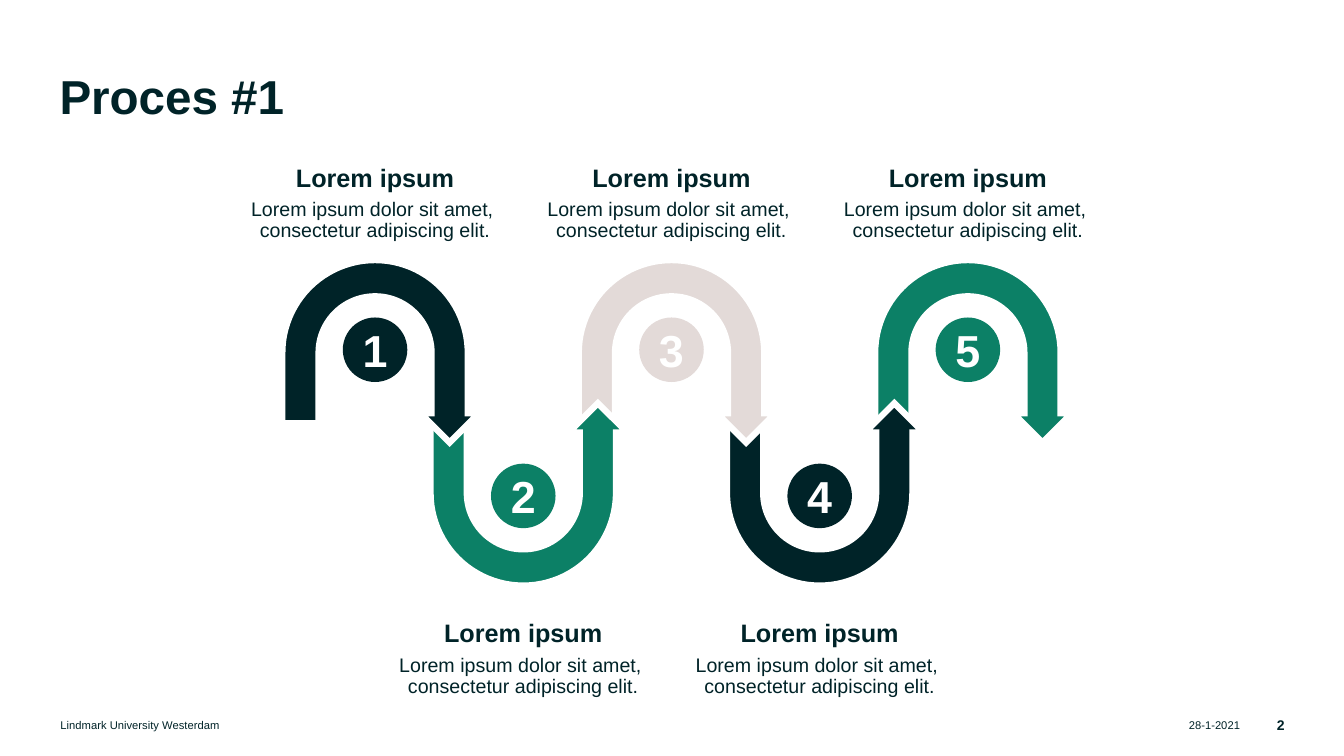
from dataclasses import dataclass
from math import cos, pi, sin

from lxml.etree import SubElement
from pptx import Presentation
from pptx.dml.color import RGBColor
from pptx.enum.shapes import MSO_SHAPE as Preset
from pptx.enum.text import MSO_ANCHOR as Anchor, MSO_AUTO_SIZE as AutoSize, PP_ALIGN as Align
from pptx.oxml.ns import qn
from pptx.shapes.autoshape import Shape
from pptx.slide import Slide
from pptx.text.text import TextFrame
from pptx.util import Inches, Pt

COLORS = {"dark": "002328", "green": "0C8066", "sand": "E3DAD8", "white": "FFFFFF"}
FIRST_CENTER, STEP_PITCH = 3.72, 1.47
OUTER_RADIUS, INNER_RADIUS = 0.92, 0.56
LEG_CENTER, HEAD_HALF = 0.74, 0.29
TAIL_END, HEAD_BASE, HEAD_TIP = 0.7, 0.6, 0.89
BADGE_SIZE = 0.64
CAPTION_WIDTH, CAPTION_HEIGHT = 2.56, 0.78
ARC_SEGMENTS = 48


@dataclass(frozen=True)
class Row:
    arc_y: float
    leg_direction: int
    badge_top: float
    caption_top: float


@dataclass(frozen=True)
class Step:
    number: int
    color: str
    row: Row
    heading: str = "Lorem ipsum"
    detail: str = "Lorem ipsum dolor sit amet, \vconsectetur adipiscing elit."

    @property
    def center(self) -> float:
        return FIRST_CENTER + (self.number - 1) * STEP_PITCH


@dataclass(frozen=True)
class FooterItem:
    text: str
    left: float
    width: float
    size: int
    align: Align
    bold: bool = False


UPPER = Row(arc_y=3.5, leg_direction=1, badge_top=3.15, caption_top=1.62)
LOWER = Row(arc_y=4.89, leg_direction=-1, badge_top=4.6, caption_top=6.14)
STEPS = [
    Step(1, "dark", UPPER),
    Step(2, "green", LOWER),
    Step(3, "sand", UPPER),
    Step(4, "dark", LOWER),
    Step(5, "green", UPPER),
]
FOOTER = [
    FooterItem("28-1-2021", 11.54, 0.76, 8, Align.RIGHT),
    FooterItem("Lindmark University Westerdam", 0.6, 10.79, 8, Align.LEFT),
    FooterItem("2", 12.45, 0.29, 10, Align.RIGHT, True),
]


def rgb(name: str) -> RGBColor:
    return RGBColor.from_string(COLORS[name])


def set_frame(frame: TextFrame, anchor: Anchor) -> None:
    settings = {
        "margin_left": 0, "margin_right": 0, "margin_top": 0, "margin_bottom": 0,
        "word_wrap": True, "auto_size": AutoSize.NONE, "vertical_anchor": anchor,
    }
    for attribute, value in settings.items():
        setattr(frame, attribute, value)


def write(frame: TextFrame, text: str, size: int, color: str = "dark", bold: bool = False,
          index: int = 0, **layout: object) -> None:
    """Write one paragraph; layout holds paragraph attributes such as alignment."""
    paragraph = frame.paragraphs[0] if index == 0 else frame.add_paragraph()
    paragraph.text = text
    for attribute, value in layout.items():
        setattr(paragraph, attribute, value)
    for run in paragraph.runs:
        for attribute, value in {"name": "Arial", "size": Pt(size), "bold": bold}.items():
            setattr(run.font, attribute, value)
        run.font.color.rgb = rgb(color)


def add_text_frame(slide: Slide, left: float, top: float, width: float, height: float,
                   anchor: Anchor) -> TextFrame:
    box = slide.shapes.add_textbox(Inches(left), Inches(top), Inches(width), Inches(height))
    set_frame(box.text_frame, anchor)
    return box.text_frame


def paint(shape: Shape, color: str) -> None:
    shape.shadow.inherit = False
    shape.fill.solid()
    shape.fill.fore_color.rgb = rgb(color)


def arc(radius: float, start: float, end: float) -> list[tuple[float, float]]:
    """Points on the bend, relative to its centre, with the legs running towards +y."""
    angles = [start + (end - start) * i / ARC_SEGMENTS for i in range(ARC_SEGMENTS + 1)]
    return [(radius * cos(angle), -radius * sin(angle)) for angle in angles]


def add_bent_arrow(slide: Slide, step: Step) -> None:
    outline = [
        (-OUTER_RADIUS, TAIL_END),
        *arc(OUTER_RADIUS, pi, 0),
        (OUTER_RADIUS, HEAD_BASE),
        (LEG_CENTER + HEAD_HALF, HEAD_BASE),
        (LEG_CENTER, HEAD_TIP),
        (LEG_CENTER - HEAD_HALF, HEAD_BASE),
        (INNER_RADIUS, HEAD_BASE),
        *arc(INNER_RADIUS, 0, pi),
        (-INNER_RADIUS, TAIL_END),
    ]
    points = [(Inches(step.center + x), Inches(step.row.arc_y + step.row.leg_direction * y))
              for x, y in outline]
    builder = slide.shapes.build_freeform(*points[0])
    builder.add_line_segments(points[1:], close=True)
    arrow = builder.convert_to_shape()
    paint(arrow, step.color)
    arrow.line.color.rgb = rgb("white")
    arrow.line.width = Pt(4.5)
    SubElement(arrow.line._get_or_add_ln(), qn("a:miter"), lim="800000")


def add_badge(slide: Slide, step: Step) -> None:
    badge = slide.shapes.add_shape(
        Preset.OVAL, Inches(step.center - BADGE_SIZE / 2), Inches(step.row.badge_top),
        Inches(BADGE_SIZE), Inches(BADGE_SIZE))
    paint(badge, step.color)
    badge.line.fill.background()
    set_frame(badge.text_frame, Anchor.MIDDLE)
    write(badge.text_frame, str(step.number), 32, "white", True, alignment=Align.CENTER)


def add_caption(slide: Slide, step: Step) -> None:
    frame = add_text_frame(slide, step.center - CAPTION_WIDTH / 2, step.row.caption_top,
                           CAPTION_WIDTH, CAPTION_HEIGHT, Anchor.BOTTOM)
    layout = {"alignment": Align.CENTER, "line_spacing": 0.9, "space_before": Pt(5)}
    write(frame, step.heading, 18, bold=True, **layout)
    write(frame, step.detail, 14, index=1, **layout)


def add_title(slide: Slide, text: str) -> None:
    title = slide.shapes.title
    position = {"left": 0.59, "top": 0.79, "width": 12.15, "height": 0.78}
    for attribute, value in position.items():
        setattr(title, attribute, Inches(value))
    set_frame(title.text_frame, Anchor.TOP)
    write(title.text_frame, text, 34, bold=True, alignment=Align.LEFT, line_spacing=Pt(32))


def main() -> None:
    deck = Presentation()
    deck.slide_width, deck.slide_height = Inches(13.33), Inches(7.5)
    slide = deck.slides.add_slide(deck.slide_layouts.get_by_name("Title Only"))
    add_title(slide, "Proces #1")
    for item in FOOTER:
        frame = add_text_frame(slide, item.left, 7.12, item.width, 0.14, Anchor.MIDDLE)
        write(frame, item.text, item.size, bold=item.bold, alignment=item.align)
    for step in reversed(STEPS):  # each arrowhead overlaps the tail of the next step
        add_bent_arrow(slide, step)
    for step in STEPS:
        add_badge(slide, step)
        add_caption(slide, step)
    deck.save("out.pptx")


if __name__ == "__main__":
    main()
